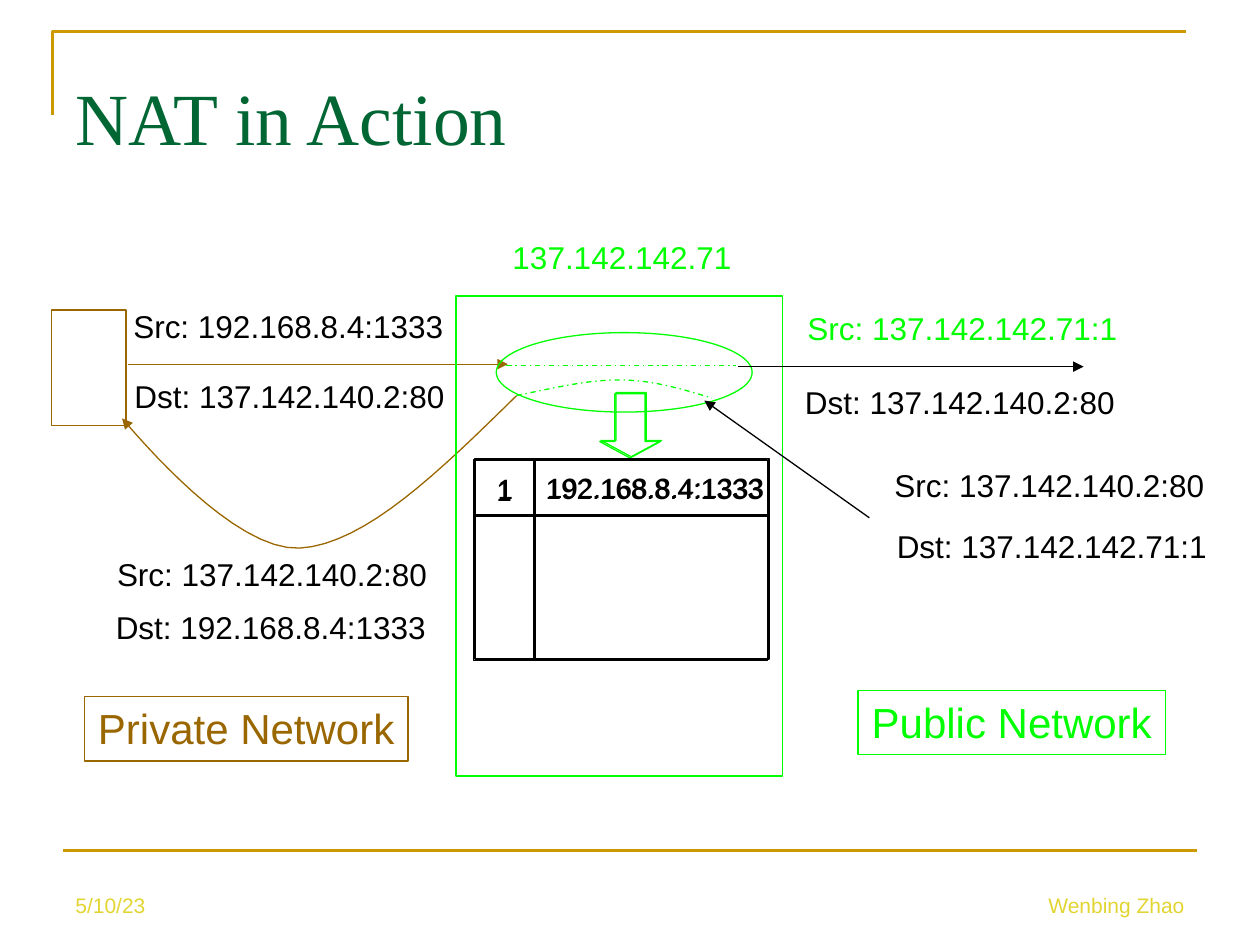
from lxml.etree import SubElement
from pptx import Presentation
from pptx.dml.color import RGBColor
from pptx.enum.dml import MSO_LINE
from pptx.enum.shapes import MSO_CONNECTOR, MSO_SHAPE
from pptx.enum.text import MSO_ANCHOR, PP_ALIGN
from pptx.oxml.ns import qn
from pptx.util import Pt

GOLD = RGBColor(0xCC, 0x99, 0x00)
YELLOW = RGBColor(0xE2, 0xD5, 0x32)
DARK_GREEN = RGBColor(0x00, 0x66, 0x33)
PRIVATE = RGBColor(0x99, 0x66, 0x00)
PUBLIC = RGBColor(0x00, 0xFF, 0x00)
BLACK = RGBColor(0x00, 0x00, 0x00)
LABEL_WIDTH, LABEL_HEIGHT = 191.5, 28.8


def write_text(shape, text, size=18, font="Arial", color=BLACK, wrap=False,
               align=PP_ALIGN.LEFT, anchor=MSO_ANCHOR.TOP):
    frame = shape.text_frame
    frame.word_wrap = wrap
    frame.vertical_anchor = anchor
    paragraph = frame.paragraphs[0]
    paragraph.alignment = align
    run = paragraph.add_run()
    run.text = text
    run.font.size = Pt(size)
    run.font.name = font
    run.font.color.rgb = color


def add_text(slide, left, top, width, height, text, **text_format):
    box = slide.shapes.add_textbox(Pt(left), Pt(top), Pt(width), Pt(height))
    write_text(box, text, **text_format)


def style_line(shape, color, width=0.75, dash=None, arrow=None):
    """Format an outline; arrow is headEnd, tailEnd or None."""
    shape.line.color.rgb = color
    shape.line.width = Pt(width)
    if dash:
        shape.line.dash_style = dash
    if arrow:
        outline = shape._element.spPr.find(qn("a:ln"))
        SubElement(outline, qn(f"a:{arrow}"), type="triangle")


def add_outline(slide, kind, left, top, width, height, color):
    shape = slide.shapes.add_shape(kind, Pt(left), Pt(top), Pt(width), Pt(height))
    shape.shadow.inherit = False
    shape.fill.background()
    style_line(shape, color)
    return shape


def add_line(slide, start, end, color, **line_format):
    connector = slide.shapes.add_connector(
        MSO_CONNECTOR.STRAIGHT, *(Pt(value) for value in (*start, *end)))
    style_line(connector, color, **line_format)
    SubElement(connector._element.spPr, qn("a:effectLst"))


def add_path(slide, points, color, **line_format):
    points = [(Pt(x), Pt(y)) for x, y in points]
    builder = slide.shapes.build_freeform(*points[0])
    builder.add_line_segments(points[1:], close=False)
    shape = builder.convert_to_shape()
    shape.shadow.inherit = False
    shape.fill.background()
    style_line(shape, color, **line_format)


def curve_points(start, segments, steps=16):
    """Sample a chain of cubic curves, each given as two controls and an end."""
    points = [start]
    for segment in segments:
        controls = (points[-1], *segment)
        for step in range(1, steps + 1):
            t = step / steps
            weights = ((1 - t) ** 3, 3 * t * (1 - t) ** 2, 3 * t * t * (1 - t), t ** 3)
            points.append(tuple(
                sum(weight * control[axis] for weight, control in zip(weights, controls))
                for axis in (0, 1)))
    return points


def draw_frame(slide, left, top, width):
    # Corner rule, title, bottom rule and footer
    add_path(slide, [(left, top + 48), (left, top), (left + width, top)], GOLD, width=1.5)
    inner = left + 6
    add_text(slide, inner, top + 3.6, width, 90, "NAT in Action", size=42, wrap=True,
             font="Times New Roman", color=DARK_GREEN, anchor=MSO_ANCHOR.MIDDLE)
    add_line(slide, (inner, top + 468), (inner + width, top + 468), GOLD, width=1.5)
    footers = (("5/10/23", 0, PP_ALIGN.LEFT), ("Wenbing Zhao", width - 168, PP_ALIGN.RIGHT))
    for text, offset, align in footers:
        add_text(slide, inner + offset, top + 473.8, 168, 36, text, size=12, wrap=True,
                 color=YELLOW, align=align, anchor=MSO_ANCHOR.BOTTOM)


def draw_packet(slide, left, top, source, destination, shift, gap, source_color=BLACK):
    add_text(slide, left, top, LABEL_WIDTH, LABEL_HEIGHT, f"Src: {source}", color=source_color)
    add_text(slide, left + shift, top + gap, LABEL_WIDTH, LABEL_HEIGHT, f"Dst: {destination}")


def draw_network_name(slide, left, top, width, text, color):
    box = add_outline(slide, MSO_SHAPE.RECTANGLE, left, top, width, 36.7, color)
    write_text(box, text, size=24, color=color, align=PP_ALIGN.CENTER)


def draw_lookup_table(slide, left, top, width, height):
    # Translation entry with the arrow that leads to it
    add_outline(slide, MSO_SHAPE.RECTANGLE, left, top, width, height, BLACK)
    add_text(slide, left + 34, top + 3.2, 139, 26.6, "192.168.8.4:1333", size=16)
    add_line(slide, (left + 34.4, top), (left + 34.4, top + height), BLACK)
    add_line(slide, (left, top + 32), (left + width, top + 32), BLACK)
    add_text(slide, left + 5.8, top + 4, 22.3, 26.6, "1", size=16, wrap=True)
    arrow = add_outline(slide, MSO_SHAPE.DOWN_ARROW, left + 72, top - 37.8, 34.6, 36.7, PUBLIC)
    arrow.adjustments[0], arrow.adjustments[1] = 0.5, 0.27


def draw_router(slide, left, top, width, height):
    add_text(slide, left + 25.2, top - 36.7, 139.7, LABEL_HEIGHT, "137.142.142.71", color=PUBLIC)
    add_outline(slide, MSO_SHAPE.RECTANGLE, left, top, width, height, PUBLIC)
    add_outline(slide, MSO_SHAPE.OVAL, left + 23, top + 20.9, 146.2, 45.4, PUBLIC)

    # Outgoing and returning translation
    add_path(slide, [(left + 28.8, top + 39.6), (left + 159.9, top + 39.6)],
             PUBLIC, dash=MSO_LINE.DASH_DOT)
    returning = curve_points((left + 34.6, top + 56.9), [
        ((left + 55.5, top + 52.6), (left + 76.4, top + 47.5), (left + 95, top + 48)),
        ((left + 113, top + 48.2), (left + 129.6, top + 53.3), (left + 146.2, top + 58.3))])
    add_path(slide, returning, PUBLIC, dash=MSO_LINE.DASH_DOT)

    # The table is drawn twice, slightly apart, for a heavier look
    for shift in (0, 0.7):
        draw_lookup_table(slide, left + 10.1 + shift, top + 93.6 - shift, 168, 114.5)


def draw_private_side(slide, left, top):
    add_outline(slide, MSO_SHAPE.RECTANGLE, left, top, 42.5, 66.2, PRIVATE)

    # Request to the router
    add_line(slide, (left + 43.9, top + 31), (left + 260.7, top + 31), PRIVATE, arrow="tailEnd")
    draw_packet(slide, left + 39.6, top - 5, "192.168.8.4:1333", "137.142.140.2:80", 0.7, 39.6)

    # Reply to the host
    reply = curve_points((left + 265.7, top + 49), [
        ((left + 222.5, top + 91.4), (left + 179.3, top + 133.9), (left + 141.9, top + 136.1)),
        ((left + 104.4, top + 138.2), (left + 49.7, top + 72.7), (left + 40.3, top + 62))])
    add_path(slide, reply, PRIVATE, arrow="tailEnd")
    draw_packet(slide, left + 30.3, top + 136.8, "137.142.140.2:80", "192.168.8.4:1333", -0.7, 30.2)
    draw_network_name(slide, left + 18.7, top + 221, 185, "Private Network", PRIVATE)


def draw_public_side(slide, left, top):
    # Request to the server
    add_line(slide, (left, top), (left + 197.3, top), BLACK, arrow="tailEnd")
    draw_packet(slide, left + 32.4, top - 36.7, "137.142.142.71:1", "137.142.140.2:80",
                -1.4, 42.5, source_color=PUBLIC)

    # Reply to the router
    add_line(slide, (left - 19.4, top + 19.4), (left + 74.9, top + 86.4), BLACK, arrow="headEnd")
    draw_packet(slide, left + 82.1, top + 53.3, "137.142.140.2:80", "137.142.142.71:1", 1.4, 34.6)
    draw_network_name(slide, left + 68.4, top + 185, 175.7, "Public Network", PUBLIC)


def main():
    presentation = Presentation()
    presentation.slide_width, presentation.slide_height = Pt(720), Pt(540)
    slide = presentation.slides.add_slide(presentation.slide_layouts[6])
    draw_frame(slide, 30, 18, 648)
    draw_private_side(slide, 29.5, 177.1)
    draw_router(slide, 260.6, 169.2, 186.5, 274.3)
    draw_public_side(slide, 421.9, 209.5)
    presentation.save("out.pptx")


if __name__ == "__main__":
    main()
